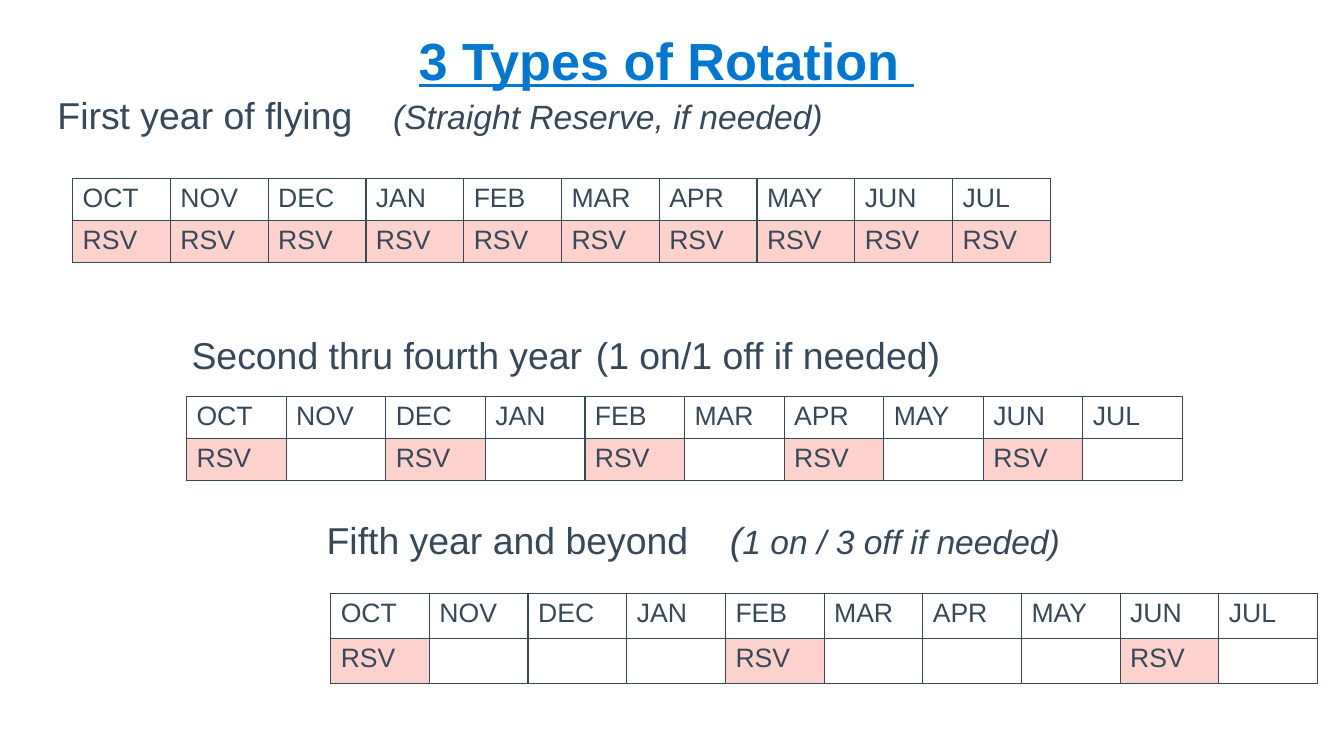
import pptx
import pptx.dml.color
import pptx.enum.text
import pptx.oxml
import pptx.oxml.ns
import pptx.util
from pptx.util import Inches

FONT = "Arial"
COLORS = {"title": "0078D2", "text": "36495A", "reserve": "FED2CC"}
TITLE = "3 Types of Rotation "
MONTHS = ["OCT", "NOV", "DEC", "JAN", "FEB", "MAR", "APR", "MAY", "JUN", "JUL"]
RESERVE = "RSV"
ROTATIONS = [
    {"heading": "First year of flying", "at": (0.57, 0.91), "tab": 3.33,
     "note": [("(Straight Reserve, if needed)", 24, True)],
     "table": (0.72, 1.77, 9.7, 0.83), "cycle": 1},
    {"heading": "Second thru fourth year", "at": (1.9, 3.29), "tab": 4.01,
     "note": [("(1 on/1 off if needed)", 26.7, False)],
     "table": (1.85, 3.93, 9.88, 0.83), "cycle": 2},
    {"heading": "Fifth year and beyond", "at": (3.24, 5.13), "tab": 4,
     "note": [("(", 26.7, True), ("1 on / 3 off if needed)", 24, True)],
     "table": (3.28, 5.89, 9.79, 0.89), "cycle": 4},
]


def rgb(name):
    """Return a named colour."""
    return pptx.dml.color.RGBColor.from_string(COLORS[name])


def add_run(paragraph, text, size, color="text", italic=False):
    """Append one formatted run and return it."""
    run = paragraph.add_run()
    run.text = text
    run.font.name = FONT
    run.font.size = pptx.util.Pt(size)
    run.font.italic = italic
    run.font.color.rgb = rgb(color)
    return run


def add_text_box(slide, left, top, width, height):
    """Add a text box without insets and return its frame."""
    frame = slide.shapes.add_textbox(*map(Inches, (left, top, width, height))).text_frame
    frame.word_wrap = True
    frame.margin_left = frame.margin_right = frame.margin_top = frame.margin_bottom = 0
    return frame


def add_title(slide):
    """Add the underlined slide title."""
    frame = add_text_box(slide, 0.91, 0, 11.4, 0.9)
    frame.vertical_anchor = pptx.enum.text.MSO_ANCHOR.BOTTOM
    paragraph = frame.paragraphs[0]
    paragraph.alignment = pptx.enum.text.PP_ALIGN.CENTER
    run = add_run(paragraph, TITLE, 37.3, "title")
    run.font.bold = True
    run.font.underline = True


def add_heading(slide, rotation):
    """Add a heading with its note at a tab stop."""
    left, top = rotation["at"]
    paragraph = add_text_box(slide, left, top, 9, 0.45).paragraphs[0]
    paragraph.alignment = pptx.enum.text.PP_ALIGN.LEFT
    paragraph_properties = paragraph._p.get_or_add_pPr()
    paragraph_properties.append(pptx.oxml.parse_xml(
        f'<a:tabLst {pptx.oxml.ns.nsdecls("a")}>'
        f'<a:tab pos="{Inches(rotation["tab"])}" algn="l"/></a:tabLst>'))
    add_run(paragraph, rotation["heading"] + "\t", 26.7)
    for text, size, italic in rotation["note"]:
        add_run(paragraph, text, size, italic=italic)


def add_borders(cell):
    """Draw a thin line on every side of a cell."""
    properties = cell._tc.get_or_add_tcPr()
    for side in ("lnL", "lnR", "lnT", "lnB"):
        properties.append(pptx.oxml.parse_xml(
            f'<a:{side} {pptx.oxml.ns.nsdecls("a")} w="{pptx.util.Pt(1)}"><a:solidFill>'
            f'<a:srgbClr val="{COLORS["text"]}"/></a:solidFill></a:{side}>'))


def add_schedule(slide, rotation):
    """Add the month table with reserve months at a fixed cycle."""
    left, top, width, height = map(Inches, rotation["table"])
    duty = [RESERVE if index % rotation["cycle"] == 0 else ""
            for index in range(len(MONTHS))]
    table = slide.shapes.add_table(2, len(MONTHS), left, top, width, height).table
    table.first_row = False
    table.horz_banding = False
    for row, labels in enumerate((MONTHS, duty)):
        for column, label in enumerate(labels):
            cell = table.cell(row, column)
            add_borders(cell)
            if label == RESERVE:
                cell.fill.solid()
                cell.fill.fore_color.rgb = rgb("reserve")
            else:
                cell.fill.background()
            if label:
                add_run(cell.text_frame.paragraphs[0], label, 19)


def main():
    """Build and save the rotation slide."""
    presentation = pptx.Presentation()
    presentation.slide_width = Inches(13.33)
    presentation.slide_height = Inches(7.5)
    slide = presentation.slides.add_slide(presentation.slide_layouts[6])
    add_title(slide)
    for rotation in ROTATIONS:
        add_heading(slide, rotation)
        add_schedule(slide, rotation)
    presentation.save("out.pptx")


if __name__ == "__main__":
    main()
